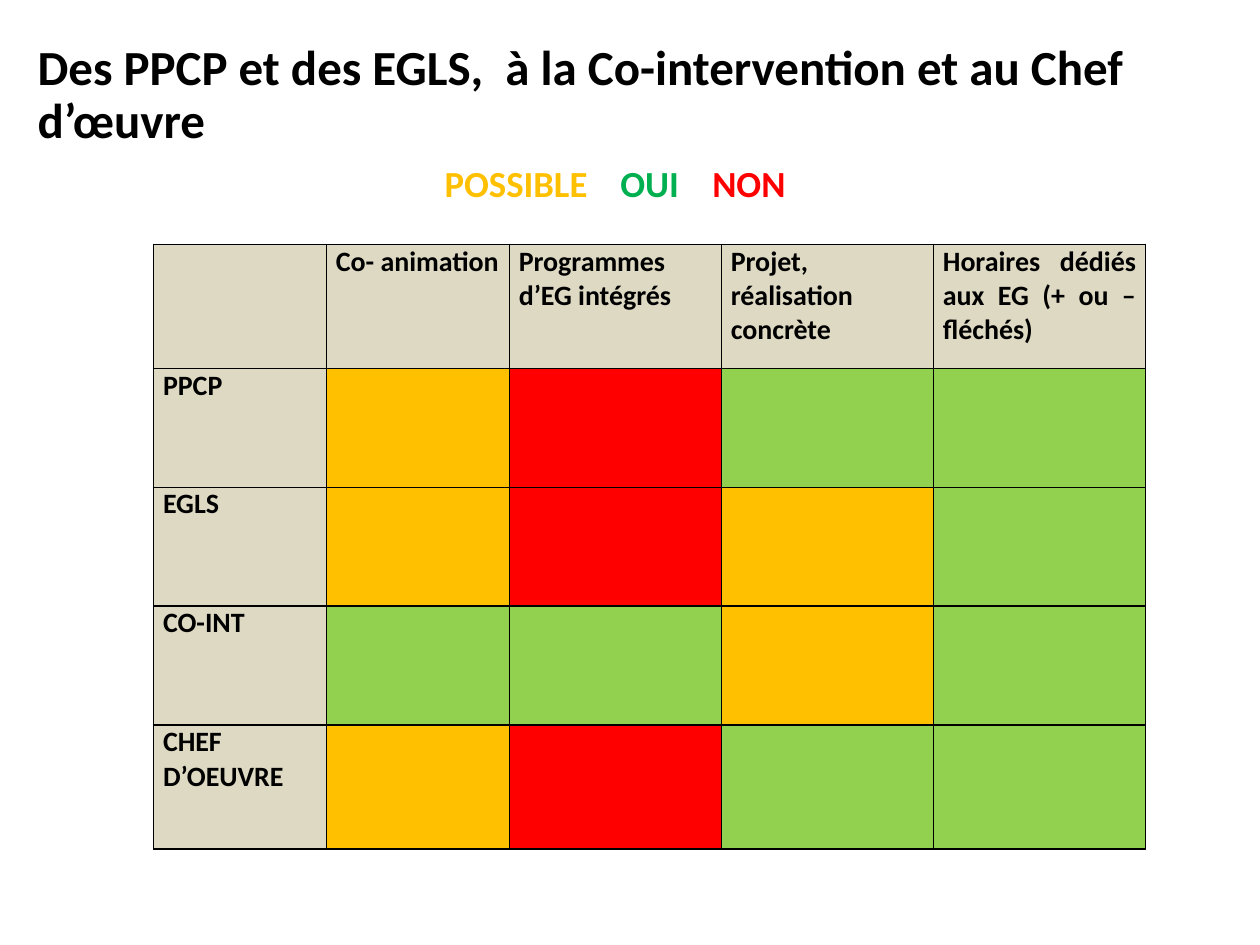
from lxml import etree
from pptx import Presentation
from pptx.dml.color import RGBColor
from pptx.enum import text
from pptx.oxml import ns
from pptx.util import Pt

BLACK = RGBColor(0x00, 0x00, 0x00)
BEIGE = RGBColor(0xDD, 0xD9, 0xC3)
AMBER = RGBColor(0xFF, 0xC0, 0x00)
RED = RGBColor(0xFF, 0x00, 0x00)
LIME = RGBColor(0x92, 0xD0, 0x50)
GREEN = RGBColor(0x00, 0xB0, 0x50)


def add_run(p, words, size=16, color=BLACK):
    r = p.add_run()
    r.text = words
    r.font.name = "Calibri"
    r.font.size = Pt(size)
    r.font.bold = True
    r.font.color.rgb = color


prs = Presentation()
prs.slide_width, prs.slide_height = Pt(720), Pt(540)
s = prs.slides.add_slide(prs.slide_layouts[6])

title = s.shapes.add_textbox(Pt(14.4), Pt(21.6), Pt(692), Pt(67))
tf = title.text_frame
tf.word_wrap = True
tf.vertical_anchor = text.MSO_ANCHOR.MIDDLE
tf.paragraphs[0].line_spacing = 0.9
add_run(tf.paragraphs[0], "Des PPCP et des EGLS,  à la Co-intervention et au Chef d’œuvre", size=28)

legend = s.shapes.add_textbox(Pt(254), Pt(88.6), Pt(240), Pt(36))
tf = legend.text_frame
tf.word_wrap = True
tf.margin_left = tf.margin_right = 0
p = tf.paragraphs[0]
tabs = etree.SubElement(p._p.get_or_add_pPr(), ns.qn("a:tabLst"))
for pos in (100.5, 153):
    etree.SubElement(tabs, ns.qn("a:tab"), pos=str(Pt(pos)), algn="l")
for words, color in (("POSSIBLE\t", AMBER), ("OUI\t", GREEN), ("NON", RED)):
    add_run(p, words, size=21, color=color)

headers = ["", "Co- animation", "Programmes d’EG intégrés",
           "Projet, réalisation concrète", "Horaires dédiés aux EG (+ ou – fléchés)"]
ratings = [
    ("PPCP", AMBER, RED, LIME, LIME),
    ("EGLS", AMBER, RED, AMBER, LIME),
    ("CO-INT", LIME, LIME, AMBER, LIME),
    ("CHEF D’OEUVRE", AMBER, RED, LIME, LIME),
]
rows = [[(h, BEIGE) for h in headers]]
for name, *colors in ratings:
    rows.append([(name, BEIGE)] + [("", c) for c in colors])
widths = [98.8, 104.5, 121.2, 121.2, 121.2]
heights = [70.8, 68, 68, 68, 70.8]

table = s.shapes.add_table(len(rows), len(widths), Pt(87.8), Pt(139.7),
                           Pt(sum(widths)), Pt(sum(heights))).table
table.horz_banding = False
for column, width in zip(table.columns, widths):
    column.width = Pt(width)
for row, height, values in zip(table.rows, heights, rows):
    row.height = Pt(height)
    for cell, (words, color) in zip(row.cells, values):
        cell.margin_left = cell.margin_right = Pt(5.4)
        cell.margin_top = cell.margin_bottom = 0
        cell.fill.solid()
        cell.fill.fore_color.rgb = color
        p = cell.text_frame.paragraphs[0]
        p.alignment = text.PP_ALIGN.JUSTIFY
        if words:
            add_run(p, words)
        tcPr = cell._tc.get_or_add_tcPr()
        for i, side in enumerate(("lnL", "lnR", "lnT", "lnB")):
            ln = etree.Element(ns.qn(f"a:{side}"), w=str(Pt(1)))
            fill = etree.SubElement(ln, ns.qn("a:solidFill"))
            etree.SubElement(fill, ns.qn("a:srgbClr"), val=str(BLACK))
            tcPr.insert(i, ln)

prs.save("out.pptx")
